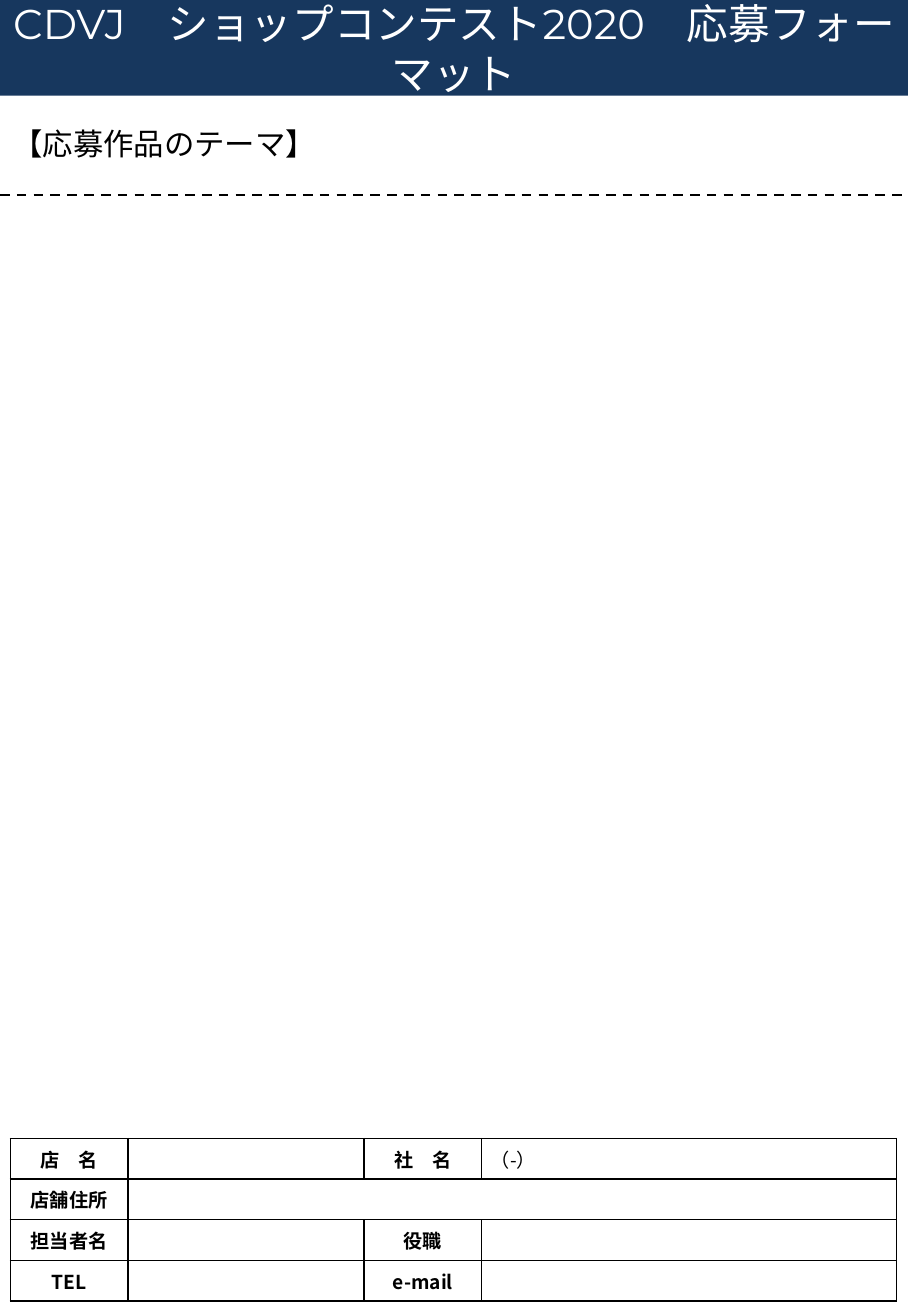
from lxml import etree
from pptx import Presentation
from pptx.dml.color import RGBColor
from pptx.enum.dml import MSO_LINE
from pptx.enum.shapes import MSO_CONNECTOR
from pptx.enum.text import MSO_ANCHOR, MSO_AUTO_SIZE, PP_ALIGN
from pptx.oxml.ns import qn
from pptx.util import Inches, Pt

NAVY = RGBColor(0x17, 0x37, 0x5E)
WHITE = RGBColor(0xFF, 0xFF, 0xFF)
BLACK = RGBColor(0, 0, 0)
JAPANESE_FONT = "Noto Sans CJK JP"
TITLE_FONT = "Montserrat"
LEFT, CENTER = PP_ALIGN.LEFT, PP_ALIGN.CENTER
MIDDLE = MSO_ANCHOR.MIDDLE
NO_AUTO_SIZE = MSO_AUTO_SIZE.NONE
STRAIGHT, DASH = MSO_CONNECTOR.STRAIGHT, MSO_LINE.DASH

WIDTH, HEIGHT = Inches(7.88), Inches(11.42)
COLUMNS = [1.02, 2.05, 1.02, 3.6]
LABEL_COLUMNS = (0, 2)
ENTRIES = [
    ["店　名", "", "社　名", "（-）"],
    ["店舗住所", "", "", ""],
    ["担当者名", "", "役職", ""],
    ["TEL", "", "e-mail", ""],
]
ADDRESS_ROW = 1


def format_paragraph(paragraph, size, color, align=LEFT, bold=False, name=JAPANESE_FONT):
    paragraph.alignment = align
    font = paragraph.font
    font.size, font.bold, font.name = Pt(size), bold, name
    font.color.rgb = color
    properties = paragraph._p.pPr.find(qn("a:defRPr"))
    etree.SubElement(properties, qn("a:ea")).set("typeface", JAPANESE_FONT)


def add_banner(slide, left, top, width, height):
    title = slide.shapes.title
    title.left, title.top, title.width, title.height = left, top, width, height
    title.fill.solid()
    title.fill.fore_color.rgb = NAVY
    frame = title.text_frame
    frame.text = "CDVJ　ショップコンテスト2020　応募フォーマット"
    frame.word_wrap = True
    frame.auto_size = NO_AUTO_SIZE
    frame.vertical_anchor = MIDDLE
    frame.margin_left = frame.margin_right = Inches(0.11)
    format_paragraph(frame.paragraphs[0], 26, WHITE, CENTER, name=TITLE_FONT)


def add_theme_field(slide, left, top, width, height):
    """Place the theme heading with a dashed rule along the bottom of the box."""
    heading = slide.shapes.add_textbox(left, top, width, Inches(0.43))
    frame = heading.text_frame
    frame.word_wrap = True
    frame.margin_left = frame.margin_right = Inches(0.11)
    frame.text = "【応募作品のテーマ】"
    format_paragraph(frame.paragraphs[0], 19, BLACK)

    bottom = top + height
    rule = slide.shapes.add_connector(STRAIGHT, left, bottom, left + width, bottom)
    rule.line.color.rgb = BLACK
    rule.line.width = Pt(1.5)
    rule.line.dash_style = DASH
    etree.SubElement(rule._element.spPr, qn("a:effectLst"))


def add_borders(cell):
    properties = cell._tc.get_or_add_tcPr()
    for position, side in enumerate(("lnL", "lnR", "lnT", "lnB")):
        border = etree.Element(qn(f"a:{side}"), w=str(Pt(1)))
        fill = etree.SubElement(border, qn("a:solidFill"))
        etree.SubElement(fill, qn("a:srgbClr")).set("val", str(BLACK))
        properties.insert(position, border)


def add_entry_table(slide, left, top, width, height):
    frame = slide.shapes.add_table(len(ENTRIES), len(COLUMNS), left, top, width, height)
    table = frame.table
    table.first_row = table.horz_banding = False
    for column, share in zip(table.columns, COLUMNS):
        column.width = int(width * share / sum(COLUMNS))
    for row_index, entries in enumerate(ENTRIES):
        for column_index, text in enumerate(entries):
            cell = table.cell(row_index, column_index)
            is_label = column_index in LABEL_COLUMNS
            cell.text = text
            cell.fill.background()
            cell.vertical_anchor = MIDDLE
            cell.margin_left = cell.margin_right = Inches(0.08)
            cell.margin_top = cell.margin_bottom = Inches(0.05)
            add_borders(cell)
            format_paragraph(cell.text_frame.paragraphs[0], 12, BLACK,
                             CENTER if is_label else LEFT, is_label)
    table.cell(ADDRESS_ROW, 1).merge(table.cell(ADDRESS_ROW, len(COLUMNS) - 1))


def main():
    presentation = Presentation()
    presentation.slide_width, presentation.slide_height = WIDTH, HEIGHT
    slide = presentation.slides.add_slide(presentation.slide_layouts[5])
    add_banner(slide, 0, 0, WIDTH, Inches(0.83))
    add_theme_field(slide, 0, Inches(1.04), WIDTH, Inches(0.65))
    add_entry_table(slide, Inches(0.09), Inches(9.88), Inches(7.69), Inches(1.41))
    presentation.save("out.pptx")


if __name__ == "__main__":
    main()
